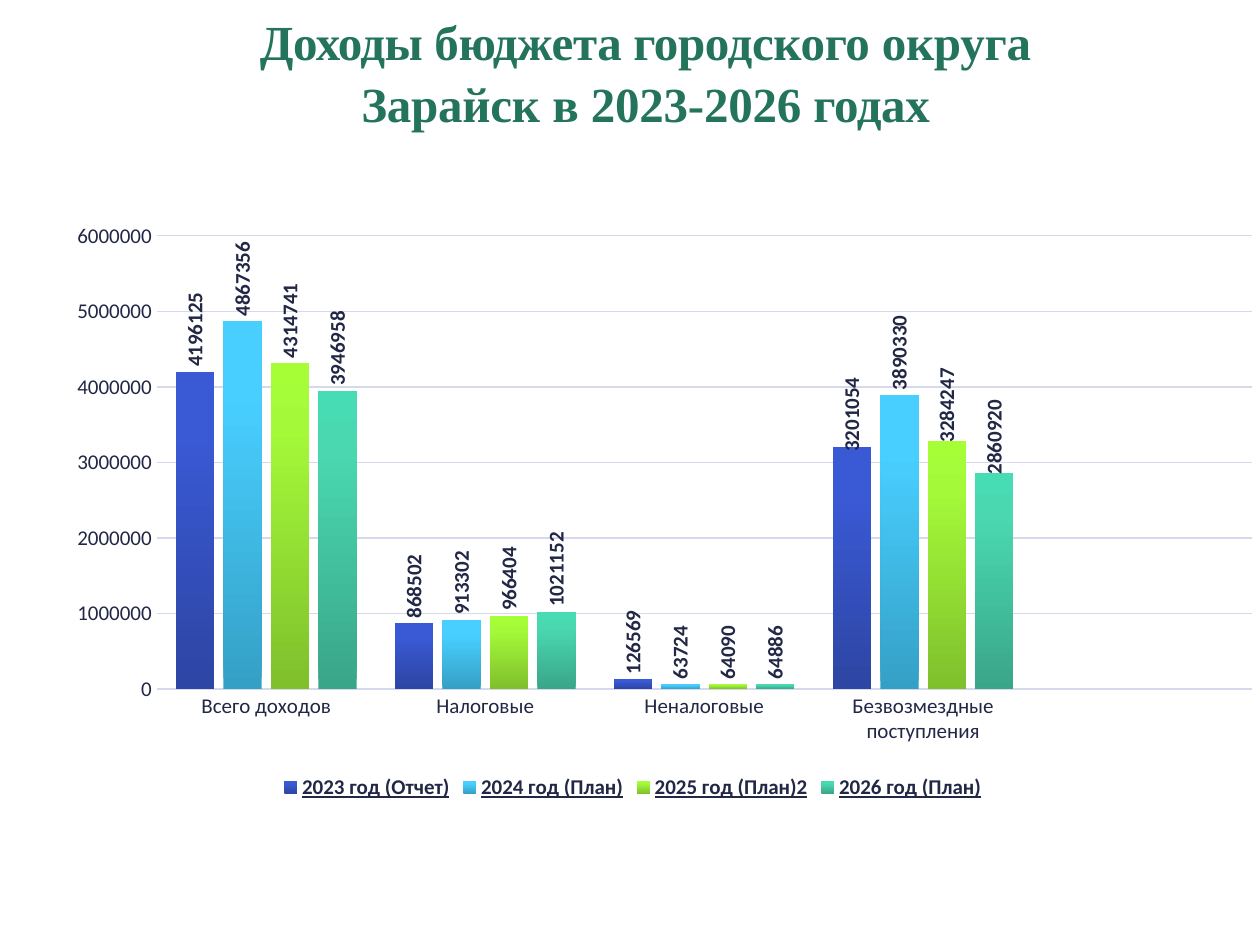
from lxml import etree
from pptx import Presentation, util as u
from pptx.chart.data import CategoryChartData
from pptx.dml.color import RGBColor
from pptx.enum import chart as ch, text
from pptx.oxml import parse_xml
from pptx.oxml.ns import nsdecls, qn

PX = 914400 // 126
GREEN = RGBColor(0x23, 0x73, 0x5D)
NAVY = RGBColor(0x21, 0x27, 0x45)
GRID = RGBColor(0xD6, 0xD9, 0xEB)

# Title runs: text, letter spacing in hundredths of a point
TITLE = [("Доходы ", -30), ("бюджета городского ", -20), ("округа\vЗарайск ", -10),
         ("в ", 0), ("2023-2026 ", -10), ("годах", -20)]
CATEGORIES = ["Всего доходов", "Налоговые", "Неналоговые", "Безвозмездные поступления", ""]
# Name, values, gradient colours from bottom to top, shift of the last label in px
SERIES = [
    ("2023 год (Отчет)", (4196125, 868502, 126569, 3201054, None),
     ("2D45A3", "3A59D4", "3758D7"), 10),
    ("2024 год (План)", (4867356, 913302, 63724, 3890330, None),
     ("35A0C6", "48CFFF", "49CFFF"), 0),
    ("2025 год (План)2", (4314741, 966404, 64090, 3284247, None),
     ("7FC02C", "A4F939", "A6FE36"), 7),
    ("2026 год (План)", (3946958, 1021152, 64886, 2860920, None),
     ("39A688", "4AD8B1", "47DCB3"), 7),
]
STOPS = (0, 80000, 100000)
CHART_BOX = (13, 195, 1240, 610)
PLOT = {"x": 0.116, "y": 0.067, "w": 0.883, "h": 0.743}


def px(*lengths):
    return [n * PX for n in lengths]


def style(font, bold=False):
    font.size, font.name, font.bold = u.Pt(12), "Calibri", bold
    font.color.rgb = NAVY


def gradient(colors):
    stops = "".join(f'<a:gs pos="{pos}"><a:srgbClr val="{c}"/></a:gs>'
                    for pos, c in zip(STOPS, colors))
    return parse_xml(f'<a:gradFill {nsdecls("a")}><a:gsLst>{stops}</a:gsLst>'
                     '<a:lin ang="16200000" scaled="0"/></a:gradFill>')


def manual_layout(**values):
    layout = etree.Element(qn("c:layout"))
    manual = etree.SubElement(layout, qn("c:manualLayout"))
    for key, val in values.items():
        etree.SubElement(manual, qn(f"c:{key}")).set("val", str(val))
    return layout


prs = Presentation()
prs.slide_width, prs.slide_height = u.Inches(10), u.Inches(7.5)
s = prs.slides.add_slide(prs.slide_layouts[6])

# Title
tf = s.shapes.add_textbox(*px(35, -14, 1221, 169)).text_frame
tf.word_wrap = True
tf.vertical_anchor = text.MSO_ANCHOR.MIDDLE
p = tf.paragraphs[0]
p.alignment = text.PP_ALIGN.CENTER
p.font.size = u.Pt(28)
p.line_spacing = 1.05
for words, spacing in TITLE:
    for i, part in enumerate(words.split("\v")):
        if i:
            p.add_line_break()
        r = p.add_run()
        r.text = part
        r.font.name, r.font.size, r.font.bold = "Times New Roman", u.Pt(28), True
        r.font.color.rgb = GREEN
        r.font._element.set("spc", str(spacing))

# Chart
data = CategoryChartData()
data.categories = CATEGORIES
for name, values, _, _ in SERIES:
    data.add_series(name, values)
chart = s.shapes.add_chart(ch.XL_CHART_TYPE.COLUMN_CLUSTERED, *px(*CHART_BOX), data).chart
chart.has_title = False
chart.font.size, chart.font.name = u.Pt(10), "Calibri"

# Legend
chart.has_legend = True
chart.legend.position = ch.XL_LEGEND_POSITION.BOTTOM
chart.legend.include_in_layout = False
style(chart.legend.font, bold=True)
chart.legend.font.underline = True

# Axes
cat, val = chart.category_axis, chart.value_axis
for axis in (cat, val):
    axis.major_tick_mark = axis.minor_tick_mark = ch.XL_TICK_MARK.NONE
    style(axis.tick_labels.font)
val.minimum_scale, val.maximum_scale, val.major_unit = 0, 6000000, 1000000
val.format.line.fill.background()
for line in (cat.format.line, val.major_gridlines.format.line):
    line.color.rgb = GRID
    line.width = u.Pt(0.75)

# Columns and their labels
plot = chart.plots[0]
plot.gap_width, plot.overlap, plot.vary_by_categories = 100, -24, False
for series, (_, _, colors, shift) in zip(plot.series, SERIES):
    series.format.fill.solid()
    solid = series._element.spPr.find(qn("a:solidFill"))
    solid.getparent().replace(solid, gradient(colors))
    labels = series.data_labels
    labels.show_value = True
    labels.position = ch.XL_LABEL_POSITION.OUTSIDE_END
    style(labels.font, bold=True)
    if shift:
        label = series.points[3].data_label
        label.position = ch.XL_LABEL_POSITION.OUTSIDE_END
        style(label.font, bold=True)
        idx = series._element.find(".//" + qn("c:dLbl") + "/" + qn("c:idx"))
        idx.addnext(manual_layout(x=0, y=round(shift / CHART_BOX[3], 3)))
    for body in series._element.xpath("./c:dLbls//c:txPr/a:bodyPr"):
        body.set("rot", "-5400000")
        body.set("vert", "horz")

# Plot area
area = chart._chartSpace.chart.plotArea
for old in area.findall(qn("c:layout")):
    area.remove(old)
area.insert(0, manual_layout(layoutTarget="inner", xMode="edge", yMode="edge", **PLOT))

prs.save("out.pptx")
